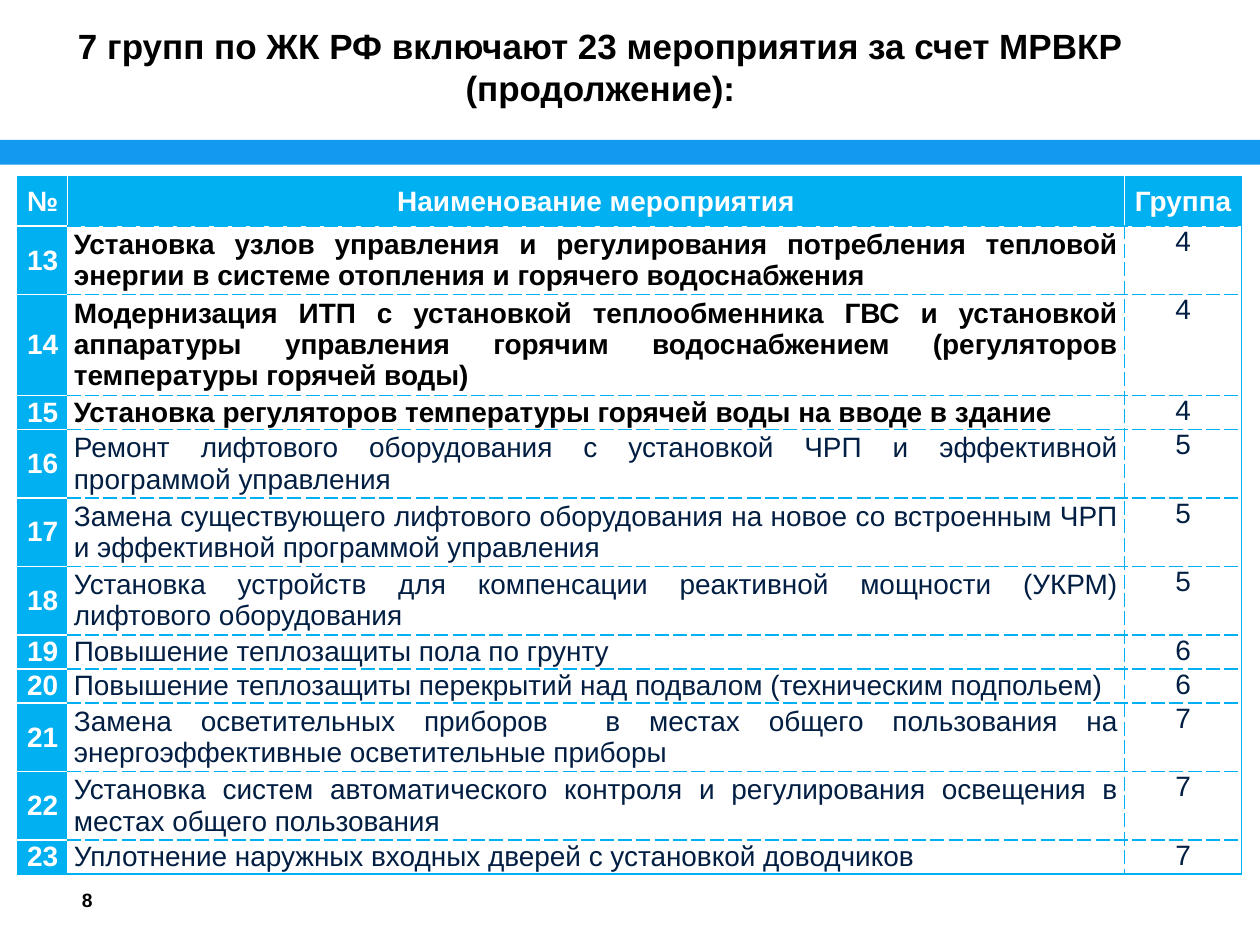
"""Build the slide listing overhaul measures 13 to 23 with their groups."""
from lxml import etree
from pptx import Presentation
from pptx.dml.color import RGBColor
from pptx.enum.shapes import MSO_SHAPE
from pptx.enum.text import MSO_ANCHOR, PP_ALIGN
from pptx.oxml.ns import qn
from pptx.util import Cm, Pt

RECTANGLE = MSO_SHAPE.RECTANGLE
TOP, MIDDLE = MSO_ANCHOR.TOP, MSO_ANCHOR.MIDDLE
CENTER, JUSTIFY = PP_ALIGN.CENTER, PP_ALIGN.JUSTIFY
FONT = "Arial"
BLACK, WHITE, NAVY = "000000", "FFFFFF", "021F43"
SKY, BAND_BLUE = "00B0F0", "139AF0"

TITLE = "7 групп по ЖК РФ включают 23 мероприятия за счет МРВКР (продолжение):"
PAGE = "8"
HEADINGS = ("№", "Наименование мероприятия", "Группа")
FIRST_NUMBER = 13
BOLD_GROUP = 4
MEASURES = [
    ("Установка узлов управления и регулирования потребления тепловой энергии в системе отопления и горячего водоснабжения", 4, 2),
    ("Модернизация ИТП с установкой теплообменника ГВС и установкой аппаратуры управления горячим водоснабжением (регуляторов температуры горячей воды)", 4, 3),
    ("Установка регуляторов температуры горячей воды на вводе в здание", 4, 1),
    ("Ремонт лифтового оборудования с установкой ЧРП и эффективной программой управления", 5, 2),
    ("Замена существующего лифтового оборудования на новое со встроенным ЧРП и эффективной программой управления", 5, 2),
    ("Установка устройств для компенсации реактивной мощности (УКРМ) лифтового оборудования", 5, 2),
    ("Повышение теплозащиты пола по грунту", 6, 1),
    ("Повышение теплозащиты перекрытий над подвалом (техническим подпольем)", 6, 1),
    ("Замена осветительных приборов  в местах общего пользования на энергоэффективные осветительные приборы", 7, 2),
    ("Установка систем автоматического контроля и регулирования освещения в местах общего пользования", 7, 2),
    ("Уплотнение наружных входных дверей с установкой доводчиков", 7, 1),
]
COLUMN_WIDTHS = (1, 21.31, 2.36)
HEADER_HEIGHT = 1
HEIGHT_BY_LINES = {1: 0.69, 2: 1.38, 3: 1.89}


def color(hex_string):
    return RGBColor.from_string(hex_string)


def write(frame, text, size, ink, bold, align):
    paragraph = frame.paragraphs[0]
    paragraph.text = text
    paragraph.alignment = align
    font = paragraph.font
    font.name, font.size, font.bold = FONT, Pt(size), bold
    font.color.rgb = color(ink)
    return paragraph


def add_caption(slide, text, box, size, margin, anchor):
    frame = slide.shapes.add_textbox(*(Cm(length) for length in box)).text_frame
    frame.word_wrap = True
    frame.vertical_anchor = anchor
    frame.margin_left = frame.margin_right = Cm(2 * margin)
    frame.margin_top = frame.margin_bottom = Cm(margin)
    write(frame, text, size, BLACK, True, CENTER)


def edge_style(outer, white):
    if outer:
        return SKY, "solid"
    return (WHITE, "solid") if white else (SKY, "sysDash")


def draw_borders(cell, row, column, last_row, last_column):
    header, number = row == 0, column == 0
    edges = {
        "a:lnL": edge_style(number, header or column == 1),
        "a:lnR": edge_style(column == last_column, header or number),
        "a:lnT": edge_style(header, number),
        "a:lnB": edge_style(row == last_row, number),
    }
    properties = cell._tc.get_or_add_tcPr()
    for tag, (ink, dash) in edges.items():
        line = etree.SubElement(properties, qn(tag), w=str(Pt(1)))
        fill = etree.SubElement(line, qn("a:solidFill"))
        etree.SubElement(fill, qn("a:srgbClr"), val=ink)
        etree.SubElement(line, qn("a:prstDash"), val=dash)


def fill_cell(cell, row, column, text, group):
    draw_borders(cell, row, column, len(MEASURES), len(HEADINGS) - 1)
    cell.margin_left = cell.margin_right = Cm(0.13)
    cell.margin_top = cell.margin_bottom = 0
    highlighted = row == 0 or column == 0
    if highlighted:
        cell.fill.solid()
        cell.fill.fore_color.rgb = color(SKY)
        ink, bold = WHITE, True
    else:
        cell.fill.background()
        bold = column == 1 and group == BOLD_GROUP
        ink = BLACK if bold else NAVY
    cell.vertical_anchor = MIDDLE if highlighted or column == 1 else TOP
    align = JUSTIFY if row and column == 1 else CENTER
    write(cell.text_frame, text, 16, ink, bold, align).space_after = Pt(6)


def add_measures(slide):
    rows = [(HEADINGS, None, HEADER_HEIGHT)]
    for number, (measure, group, lines) in enumerate(MEASURES, FIRST_NUMBER):
        rows.append(((str(number), measure, str(group)), group, HEIGHT_BY_LINES[lines]))
    height = sum(row_height for _, _, row_height in rows)
    table = slide.shapes.add_table(
        len(rows), len(HEADINGS), Cm(0.36), Cm(3.56), Cm(sum(COLUMN_WIDTHS)), Cm(height)
    ).table
    table.first_row = table.horz_banding = False
    for column, width in zip(table.columns, COLUMN_WIDTHS):
        column.width = Cm(width)
    for row, (texts, group, row_height) in enumerate(rows):
        table.rows[row].height = Cm(row_height)
        for column, text in enumerate(texts):
            fill_cell(table.cell(row, column), row, column, text, group)


def main():
    deck = Presentation()
    deck.slide_width, deck.slide_height = Cm(25.4), Cm(19.05)
    slide = deck.slides.add_slide(deck.slide_layouts[6])
    band = slide.shapes.add_shape(RECTANGLE, 0, Cm(2.82), deck.slide_width, Cm(0.5))
    band.shadow.inherit = False
    band.fill.solid()
    band.fill.fore_color.rgb = color(BAND_BLUE)
    band.line.fill.background()
    add_caption(slide, PAGE, (1, 17.63, 1.52, 1), 11, 0, MIDDLE)
    add_measures(slide)
    add_caption(slide, TITLE, (-0.66, 0.36, 25.53, 1.96), 20, 0.13, TOP)
    deck.save("out.pptx")


if __name__ == "__main__":
    main()
